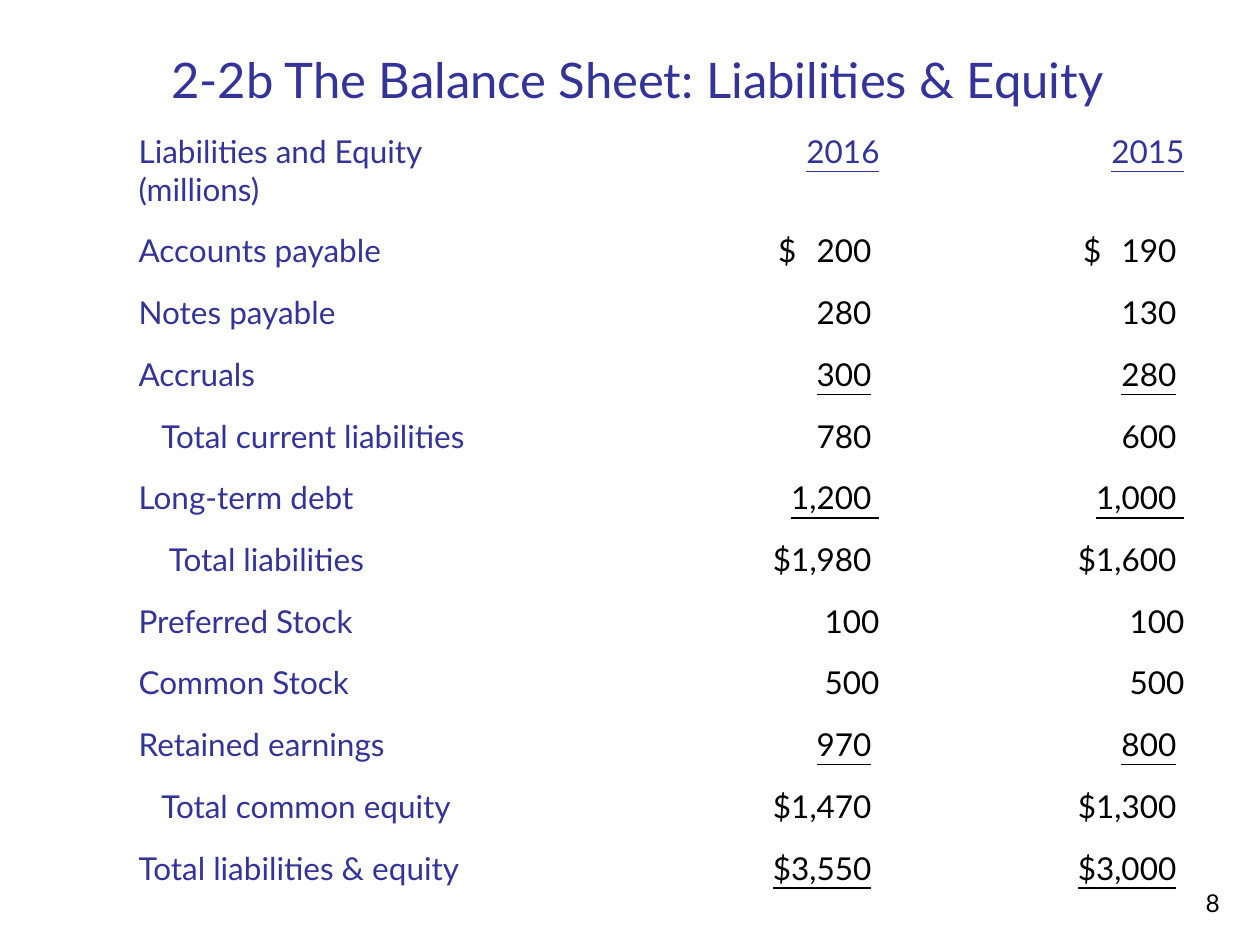
import pptx
import pptx.util
import pptx.dml.color
import pptx.enum.text

Inches, Pt = pptx.util.Inches, pptx.util.Pt
ALIGN = pptx.enum.text.PP_ALIGN
BOTTOM = pptx.enum.text.MSO_ANCHOR.BOTTOM

COLORS = {"heading": "333399", "amount": "000000"}
COLUMN_WIDTHS = [3.33, 2.75, 2.42]
HEADER_HEIGHT, ROW_HEIGHT = 0.79, 0.49
CELL_MARGIN, SPACE_WIDTH = 0.1, 0.06

# Label, indent in spaces, 2016, 2015; underscores enclose underlined text.
ROWS = [
    ("Liabilities and Equity (millions)", 0, "_2016_", "_2015_"),
    ("Accounts payable", 0, "$ 200 ", "$ 190 "),
    ("Notes payable", 0, "280 ", "130 "),
    ("Accruals", 0, "_300_ ", "_280_ "),
    ("Total current liabilities", 3, "780 ", "600 "),
    ("Long-term debt", 0, "_1,200 _", "_1,000 _"),
    ("Total liabilities", 4, "$1,980 ", "$1,600 "),
    ("Preferred Stock", 0, "100", "100"),
    ("Common Stock", 0, "500", "500"),
    ("Retained earnings", 0, "_970_ ", "_800_ "),
    ("Total common equity", 3, "$1,470 ", "$1,300 "),
    ("Total liabilities & equity", 0, "_$3,550_ ", "_$3,000_ "),
]


def format_run(r, size, color):
    r.font.name = "Lato"
    r.font.size = Pt(size)
    r.font.bold = False
    r.font.color.rgb = pptx.dml.color.RGBColor.from_string(COLORS[color])


def add_marked_runs(p, text, color):
    """Add runs to p, underlining the parts between underscores."""
    for i, part in enumerate(text.split("_")):
        # The dollar sign stands apart from the digits by letter spacing.
        pieces = ["$ ", part[2:]] if part.startswith("$ ") else [part]
        for piece in filter(None, pieces):
            r = p.add_run()
            r.text = piece
            format_run(r, 18, color)
            r.font.underline = i % 2 == 1
            if piece == "$ ":
                r.font._element.set("spc", "350")


prs = pptx.Presentation()
prs.slide_width, prs.slide_height = Inches(10), Inches(7.5)
s = prs.slides.add_slide(prs.slide_layouts[5])

title = s.shapes.title
title.left, title.top = Inches(1.26), Inches(0.23)
title.width, title.height = Inches(8.52), Inches(0.68)
tf = title.text_frame
tf.text = "2-2b The Balance Sheet: Liabilities & Equity"
tf.vertical_anchor = BOTTOM
tf.auto_size = pptx.enum.text.MSO_AUTO_SIZE.NONE
tf.paragraphs[0].alignment = ALIGN.LEFT
format_run(tf.paragraphs[0].runs[0], 28, "heading")

table_height = HEADER_HEIGHT + ROW_HEIGHT * (len(ROWS) - 1)
table = s.shapes.add_table(
    len(ROWS), len(COLUMN_WIDTHS), Inches(1), Inches(1),
    Inches(sum(COLUMN_WIDTHS)), Inches(table_height)).table
table.first_row = table.horz_banding = False
for column, width in zip(table.columns, COLUMN_WIDTHS):
    column.width = Inches(width)

for i, (label, indent, *amounts) in enumerate(ROWS):
    table.rows[i].height = Inches(ROW_HEIGHT if i else HEADER_HEIGHT)
    for j, text in enumerate([label, *amounts]):
        cell = table.cell(i, j)
        cell.fill.background()
        p = cell.text_frame.paragraphs[0]
        p.alignment = ALIGN.RIGHT if j else ALIGN.LEFT
        if j == 0:
            cell.margin_left = Inches(CELL_MARGIN + indent * SPACE_WIDTH)
        add_marked_runs(p, text, "amount" if i and j else "heading")

number = s.shapes.add_textbox(Inches(7.7), Inches(6.83), Inches(2.08), Inches(0.5))
tf = number.text_frame
tf.word_wrap = True
tf.vertical_anchor = BOTTOM
tf.text = "8"
tf.paragraphs[0].alignment = ALIGN.RIGHT
format_run(tf.paragraphs[0].runs[0], 14, "amount")

prs.save("out.pptx")
